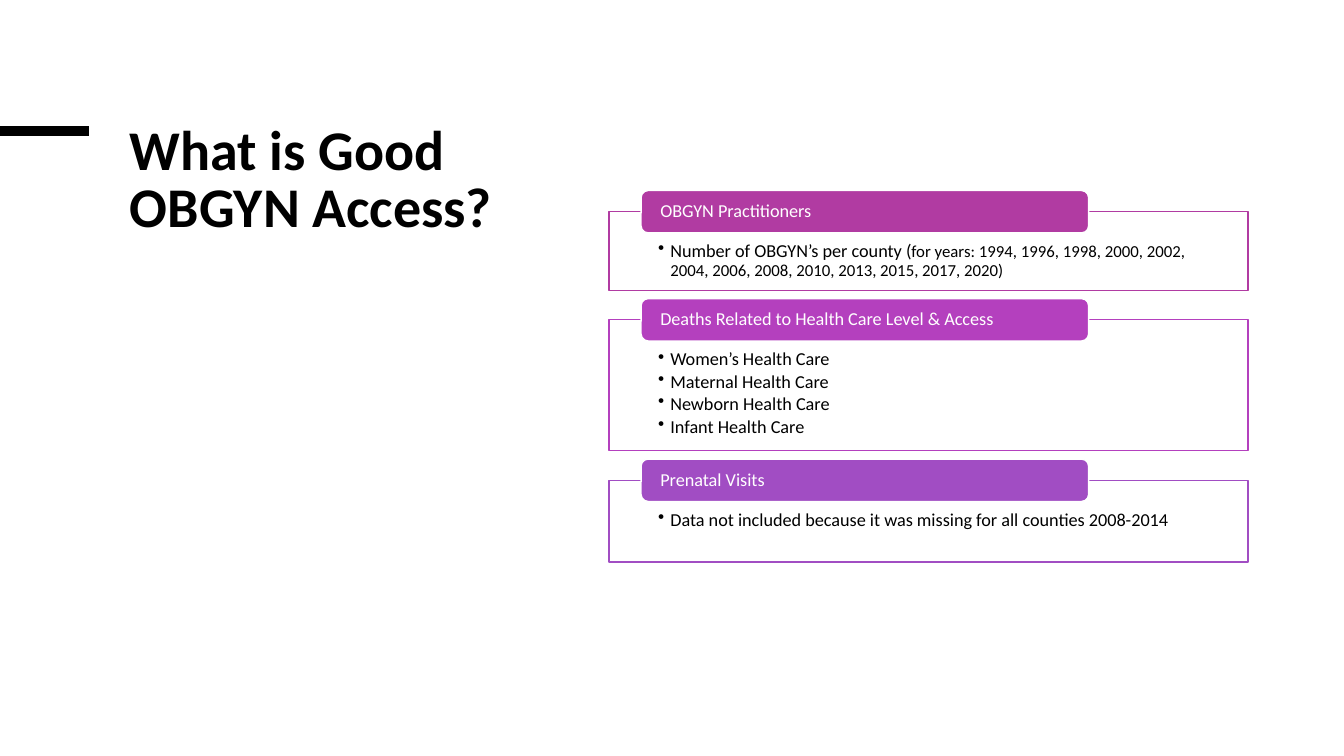
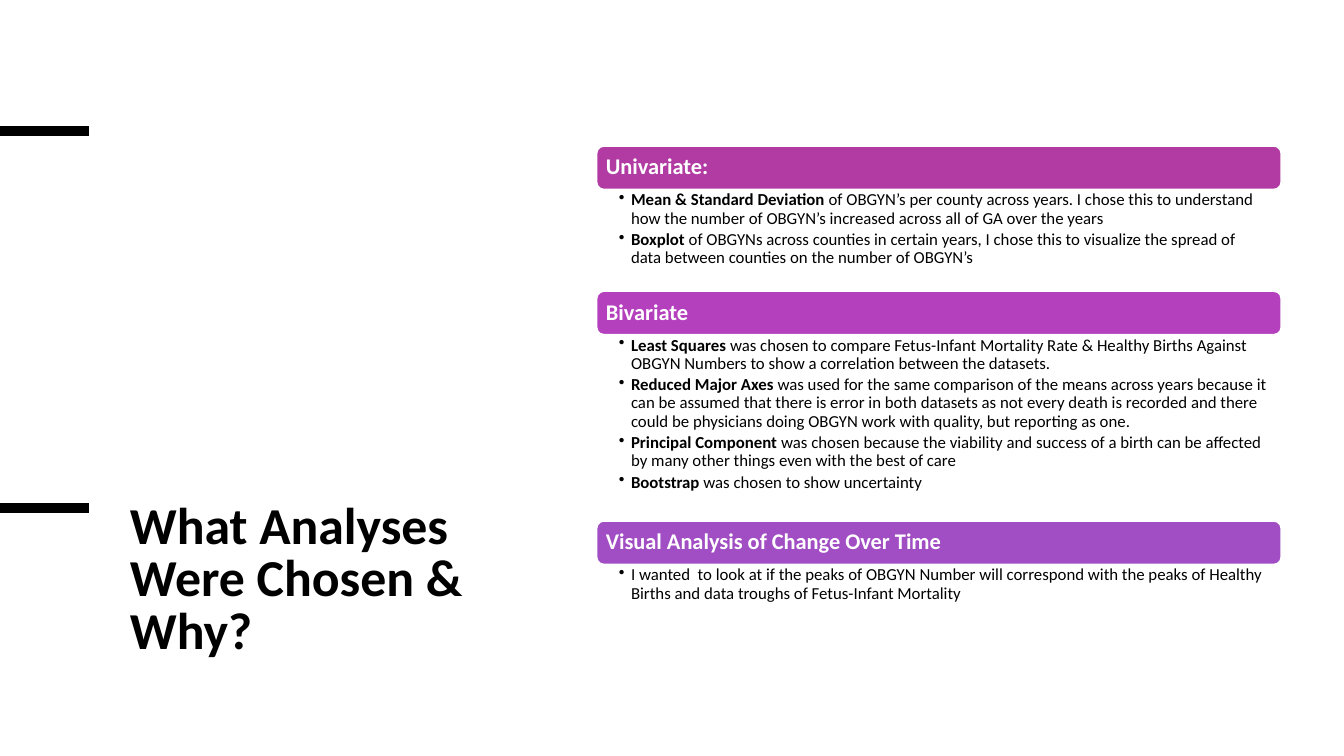
from collections import namedtuple

from lxml import etree
from pptx import Presentation
from pptx import util as u
from pptx.dml.color import RGBColor
from pptx.enum import shapes, text
from pptx.oxml.ns import qn

# Grid: 100 columns by 100 rows over the slide
WIDTH, HEIGHT = u.Inches(13.33), u.Inches(7.5)
FONT = "Calibri"
BLACK, WHITE = "000000", "FFFFFF"
ACCENTS = ["B13BA2", "B440BE", "A14DC3"]
HANG = u.Inches(0.12)
TITLE_LEFT, TITLE_WIDTH = 8.93, 30.95
RULE_ROW, RULE_WIDTH = 17.33, 6.6

Span = namedtuple("Span", "words bold size", defaults=(None, None))

# Content: heading, rows taken by the body, bullets made of spans
ACCESS = [
    ("OBGYN Practitioners", 10.4, [
        [Span("Number of OBGYN’s per county ("),
         Span("for years: 1994, 1996, 1998, 2000, 2002, 2004, 2006, 2008, "
              "2010, 2013, 2015, 2017, 2020)", size=12)]]),
    ("Deaths Related to Health Care Level & Access", 17.33, [
        [Span(f"{group} Health Care")]
        for group in ("Women’s", "Maternal", "Newborn", "Infant")]),
    ("Prenatal Visits", 10.8, [
        [Span("Data not included because it was missing for all counties 2008-2014")]]),
]
ANALYSES = [
    ("Univariate:", 13.47, [
        [Span("Mean & Standard Deviation ", True),
         Span("of OBGYN’s per county across years. I chose this to understand how "
              "the number of OBGYN’s increased across all of GA over the years")],
        [Span("Boxplot ", True),
         Span("of OBGYNs across counties in certain years, I chose this to visualize "
              "the spread of data between counties on the number of OBGYN’s")]]),
    ("Bivariate", 24.67, [
        [Span("Least Squares ", True),
         Span("was chosen to compare Fetus-Infant Mortality Rate & Healthy Births "
              "Against OBGYN Numbers to show a correlation between the datasets.")],
        [Span("Reduced Major Axes ", True),
         Span("was used for the same comparison of the means across years because it "
              "can be assumed that there is error in both datasets as not every death "
              "is recorded and there could be physicians doing OBGYN work with "
              "quality, but reporting as one.")],
        [Span("Principal Component ", True),
         Span("was chosen because the viability and success of a birth can be "
              "affected by many other things even with the best of care")],
        [Span("Bootstrap ", True), Span("was chosen to show uncertainty")]]),
    ("Visual Analysis of Change Over Time", 5.6, [
        [Span("I wanted  to look at if the peaks of OBGYN Number will correspond with "
              "the peaks of Healthy Births and data troughs of Fetus-Infant Mortality")]]),
]


def colour(value):
    return RGBColor.from_string(value)


def across(columns):
    return round(WIDTH * columns / 100)


def down(rows):
    return round(HEIGHT * rows / 100)


def place(left, top, width, height):
    return across(left), down(top), across(width), down(height)


def add_rule(page, row):
    """Short black bar at the left edge."""
    rule = page.shapes.add_connector(
        shapes.MSO_CONNECTOR.STRAIGHT, 0, down(row), across(RULE_WIDTH), down(row))
    rule.line.color.rgb = colour(BLACK)
    rule.line.width = u.Pt(6.5)
    etree.SubElement(rule.line._get_or_add_ln().getparent(), qn("a:effectLst"))


def add_panel(page, kind, area, fill, line):
    panel = page.shapes.add_shape(kind, *place(*area))
    panel.shadow.inherit = False
    panel.fill.solid()
    panel.fill.fore_color.rgb = colour(fill)
    panel.line.color.rgb = colour(line)
    panel.line.width = u.Pt(1)
    return panel


def add_bullet(para):
    props = para._p.get_or_add_pPr()
    props.set("marL", str(HANG))
    props.set("indent", str(-HANG))
    etree.SubElement(props, qn("a:buChar")).set("char", "•")


def write(box, paragraphs, size, insets, ink=BLACK, bold=False, spacing=0.9,
          after=0, bullets=False, anchor=text.MSO_ANCHOR.TOP):
    """Fill a box with paragraphs, each a list of spans."""
    frame = box.text_frame
    frame.word_wrap = True
    frame.vertical_anchor = anchor
    (frame.margin_left, frame.margin_top, frame.margin_right,
     frame.margin_bottom) = map(u.Inches, insets)
    for index, spans in enumerate(paragraphs):
        para = frame.add_paragraph() if index else frame.paragraphs[0]
        para.alignment = text.PP_ALIGN.LEFT
        para.line_spacing = spacing
        para.space_after = u.Pt(size * after)
        if bullets:
            add_bullet(para)
        para.font.name, para.font.size = FONT, u.Pt(size)
        para.font.bold, para.font.color.rgb = bold, colour(ink)
        for span in spans:
            run = para.add_run()
            run.text = span.words
            if span.bold is not None:
                run.font.bold = span.bold
            if span.size:
                run.font.size = u.Pt(span.size)


def add_heading(page, area, words, accent, size, inset, bold=False):
    """Rounded bar with a white heading."""
    bar = add_panel(page, shapes.MSO_SHAPE.ROUNDED_RECTANGLE, area, accent, WHITE)
    write(bar, [[Span(words)]], size, (inset, 0, inset, 0), WHITE, bold,
          anchor=text.MSO_ANCHOR.MIDDLE)


def add_page(deck, title, top, height, size):
    """Blank page with the shared rule and title style."""
    page = deck.slides.add_slide(deck.slide_layouts[6])
    add_rule(page, RULE_ROW)
    box = page.shapes.add_textbox(*place(TITLE_LEFT, top, TITLE_WIDTH, height))
    write(box, [[Span(title)]], size, (0.1, 0.05, 0.1, 0.05), bold=True, spacing=0.85)
    return page


def add_framed_list(page, sections):
    """Outlined bodies, each with a heading tab over its top edge."""
    top, tab, gap = 25.2, 5.6, 1.1
    for (heading, rows, bullets), accent in zip(sections, ACCENTS):
        body_top = top + tab / 2
        body = add_panel(page, shapes.MSO_SHAPE.RECTANGLE,
                         (45.3, body_top, 47.55, rows), WHITE, accent)
        write(body, bullets, 13, (0.49, 0.3, 0.49, 0.1), after=0.15, bullets=True)
        add_heading(page, (47.7, top, 33.3, tab), heading, accent, 13, 0.17)
        top = body_top + rows + gap


def add_stacked_list(page, sections):
    """Full-width heading bars, each followed by its bullets."""
    left, width, top, bar = 44.4, 50.92, 19.33, 5.73
    for (heading, rows, bullets), accent in zip(sections, ACCENTS):
        add_heading(page, (left, top, width, bar), heading, accent, 16, 0.07, bold=True)
        body = page.shapes.add_textbox(*place(left, top + bar, width, rows))
        write(body, bullets, 12, (0.22, 0.02, 0.12, 0.02), after=0.2, bullets=True)
        top += bar + rows


def main():
    deck = Presentation()
    deck.slide_width, deck.slide_height = WIDTH, HEIGHT

    # Definition of access
    page = add_page(deck, "What is Good OBGYN Access?", 15.87, 34.13, 40)
    add_framed_list(page, ACCESS)

    # Choice of analyses
    page = add_page(deck, "What Analyses Were Chosen & Why?", 65.73, 26.13, 37)
    add_rule(page, 67.2)
    add_stacked_list(page, ANALYSES)

    deck.save("out.pptx")


if __name__ == "__main__":
    main()
